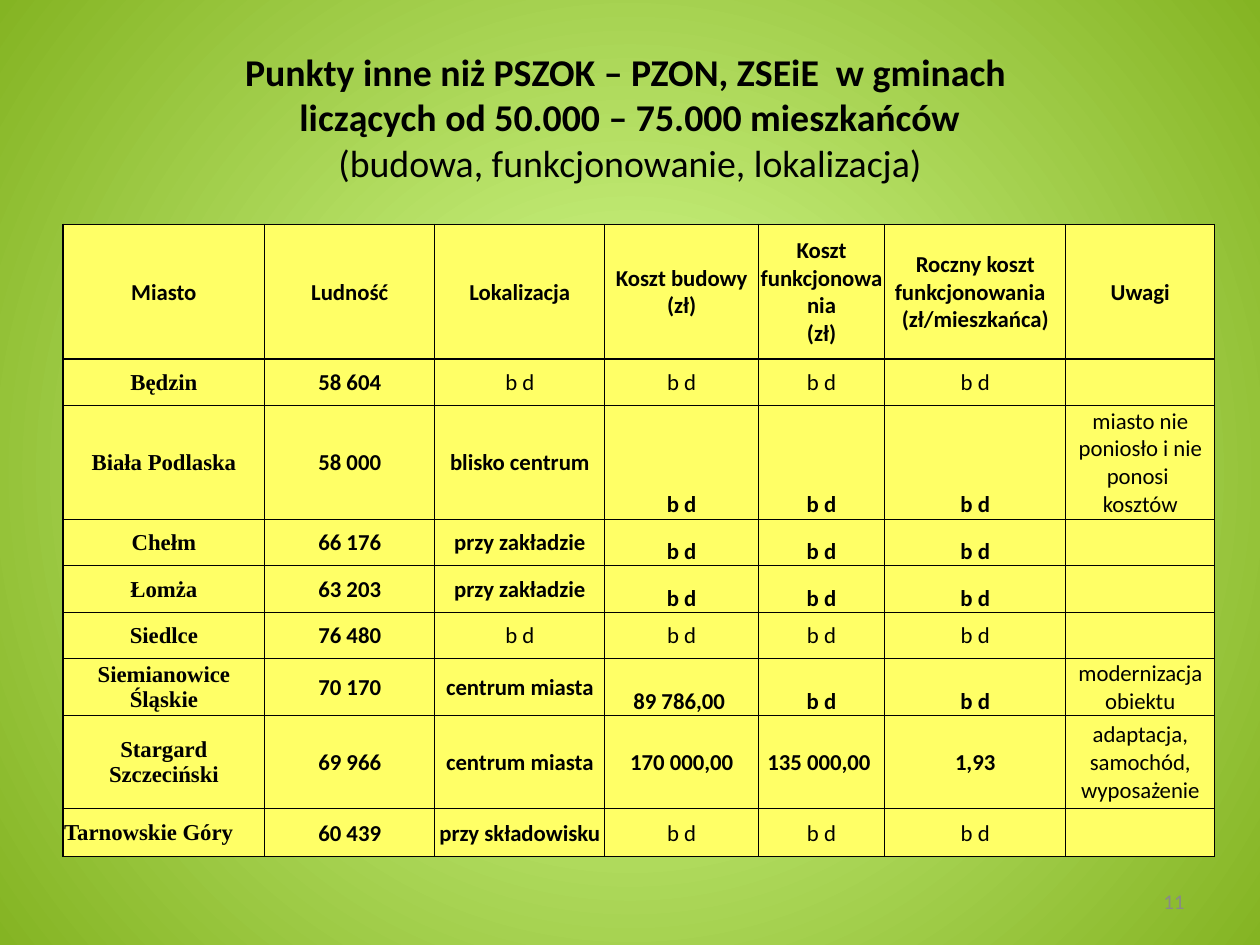
from lxml import etree
from pptx import Presentation
from pptx.dml.color import RGBColor
from pptx.enum.text import MSO_ANCHOR, PP_ALIGN
from pptx.oxml import parse_xml
from pptx.oxml.ns import qn
from pptx.util import Inches, Pt

MIDDLE, BOTTOM = MSO_ANCHOR.MIDDLE, MSO_ANCHOR.BOTTOM
LEFT, CENTER, RIGHT = PP_ALIGN.LEFT, PP_ALIGN.CENTER, PP_ALIGN.RIGHT
BLACK, GREY, YELLOW = "000000", "898989", "FFFF66"
LIGHT_GREEN, DARK_GREEN = "D9FF95", "84B423"
BODY_FONT, CITY_FONT = "Calibri", "Times New Roman"

TITLE_LINES = [
    ("Punkty inne niż PSZOK – PZON, ZSEiE  w gminach ", True),
    (" liczących od 50.000 – 75.000 mieszkańców ", True),
    ("(budowa, funkcjonowanie, lokalizacja)", False),
]
COLUMN_WIDTHS = [1.6, 1.35, 1.35, 1.22, 1, 1.44, 1.18]
COST_COLUMNS = range(3, 6)
# Row height, first column in regular weight, anchor of the cost cells, texts
ROWS = [
    (1.07, 7, MIDDLE, ["Miasto", "Ludność", "Lokalizacja", "Koszt budowy\n(zł)",
                       "Koszt funkcjonowania\n(zł)",
                       "Roczny koszt funkcjonowania  \n(zł/mieszkańca)", "Uwagi"]),
    (0.37, 2, MIDDLE, ["Będzin", "58 604", "b d", "b d", "b d", "b d", ""]),
    (0.9, 6, BOTTOM, ["Biała Podlaska", "58 000", "blisko centrum", "b d", "b d", "b d",
                      "miasto nie poniosło i nie ponosi  kosztów"]),
    (0.37, 6, BOTTOM, ["Chełm", "66 176", "przy zakładzie", "b d", "b d", "b d", ""]),
    (0.37, 6, BOTTOM, ["Łomża", "63 203", "przy zakładzie", "b d", "b d", "b d", ""]),
    (0.37, 2, MIDDLE, ["Siedlce", "76 480", "b d", "b d", "b d", "b d", ""]),
    (0.45, 6, BOTTOM, ["Siemianowice Śląskie", "70 170", "centrum miasta", "89 786,00 ",
                       "b d", "b d", "modernizacja obiektu"]),
    (0.74, 6, MIDDLE, ["Stargard Szczeciński", "69 966", "centrum miasta", "170 000,00",
                       "135 000,00 ", "1,93", "adaptacja, samochód, wyposażenie"]),
    (0.38, 3, MIDDLE, ["Tarnowskie Góry", "60 439", "przy składowisku",
                       "b d", "b d", "b d", ""]),
]
CELL_FORMAT = {"margin_left": Inches(0.01), "margin_right": Inches(0.01),
               "margin_top": Inches(0.01), "margin_bottom": 0}


def rgb(hex_color):
    return RGBColor.from_string(hex_color)


def apply_format(target, values):
    for name, value in values.items():
        setattr(target, name, value)


def add_run(paragraph, text, size, bold=False, font=BODY_FONT, color=BLACK):
    run = paragraph.add_run()
    run.text = text
    apply_format(run.font, {"size": Pt(size), "bold": bold, "name": font})
    run.font.color.rgb = rgb(color)


def add_text_box(slide, box, align):
    frame = slide.shapes.add_textbox(*map(Inches, box)).text_frame
    apply_format(frame, {"word_wrap": True, "vertical_anchor": MIDDLE})
    paragraph = frame.paragraphs[0]
    paragraph.alignment = align
    return paragraph


def set_background(slide):
    fill = slide.background.fill
    fill.gradient()
    for stop, color in zip(fill.gradient_stops, (LIGHT_GREEN, DARK_GREEN)):
        stop.color.rgb = rgb(color)
    # Turn the linear gradient into a circular one around the centre
    gradient = slide.element.find(".//" + qn("a:gradFill"))
    for stop, position in zip(gradient.iter(qn("a:gs")), ("0", "100000")):
        stop.set("pos", position)
    linear = gradient.find(qn("a:lin"))
    circle = etree.Element(qn("a:path"), {"path": "circle"})
    etree.SubElement(circle, qn("a:fillToRect"), dict.fromkeys("ltrb", "50000"))
    gradient.replace(linear, circle)


def add_title(slide, box):
    paragraph = add_text_box(slide, box, CENTER)
    for index, (line, bold) in enumerate(TITLE_LINES):
        if index:
            paragraph.add_line_break()
        add_run(paragraph, line, 21.6, bold)


def set_borders(cell, widths):
    for side, width in widths.items():
        cell._tc.get_or_add_tcPr().append(parse_xml(
            '<a:ln%s xmlns:a="http://schemas.openxmlformats.org/drawingml/2006/main" w="%d">'
            '<a:solidFill><a:srgbClr val="%s"/></a:solidFill></a:ln%s>'
            % (side, Pt(width), BLACK, side)))


def fill_cell(cell, text, bold, font, align, anchor):
    apply_format(cell, CELL_FORMAT | {"vertical_anchor": anchor})
    cell.fill.solid()
    cell.fill.fore_color.rgb = rgb(YELLOW)
    if not text:
        return
    for index, line in enumerate(text.split("\n")):
        frame = cell.text_frame
        paragraph = frame.add_paragraph() if index else frame.paragraphs[0]
        paragraph.alignment = align
        add_run(paragraph, line, 13, bold, font)


def add_city_table(slide, box):
    last_row, last_column = len(ROWS) - 1, len(COLUMN_WIDTHS) - 1
    table = slide.shapes.add_table(len(ROWS), len(COLUMN_WIDTHS),
                                   *map(Inches, box)).table
    for column, width in zip(table.columns, COLUMN_WIDTHS):
        column.width = Inches(width)
    for r, (height, regular_from, cost_anchor, texts) in enumerate(ROWS):
        table.rows[r].height = Inches(height)
        for c, text in enumerate(texts):
            cell = table.cell(r, c)
            # Heavier lines around the table and under the header
            set_borders(cell, {"L": 1 if c == 0 else 0.5,
                               "R": 1 if c == last_column else 0.5,
                               "T": 1 if r <= 1 else 0.5,
                               "B": 1 if r in (0, last_row) else 0.5})
            fill_cell(cell, text, c < regular_from,
                      CITY_FONT if r and c == 0 else BODY_FONT,
                      LEFT if r == last_row and c == 0 else CENTER,
                      cost_anchor if c in COST_COLUMNS else MIDDLE)


def add_slide_number(slide, box):
    add_run(add_text_box(slide, box, RIGHT), "11", 12, color=GREY)


def main():
    presentation = Presentation()
    presentation.slide_width, presentation.slide_height = Inches(10), Inches(7.5)
    slide = presentation.slides.add_slide(presentation.slide_layouts[6])
    set_background(slide)
    add_title(slide, (0.5, 0.3, 9, 1.25))
    add_city_table(slide, (0.5, 1.78, 9.14, 5.02))
    add_slide_number(slide, (7.17, 6.95, 2.33, 0.4))
    presentation.save("out.pptx")


if __name__ == "__main__":
    main()
